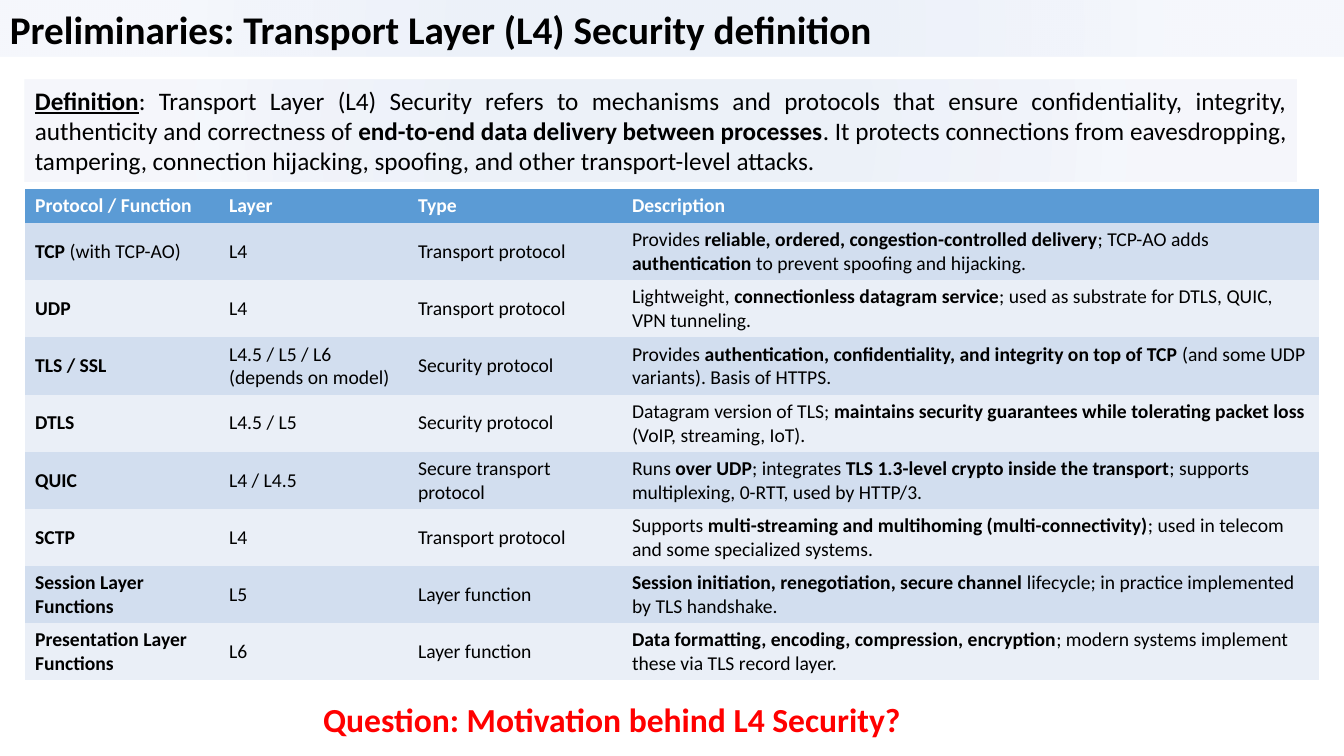
from dataclasses import dataclass

from lxml.etree import fromstring
from pptx import Presentation
from pptx.dml.color import RGBColor
from pptx.enum.shapes import MSO_SHAPE
from pptx.enum.text import MSO_ANCHOR, MSO_AUTO_SIZE, PP_ALIGN
from pptx.oxml.ns import qn
from pptx.util import Emu, Pt

FONT = "Calibri"
BLACK = RGBColor(0x00, 0x00, 0x00)
WHITE = RGBColor(0xFF, 0xFF, 0xFF)
RED = RGBColor(0xFF, 0x00, 0x00)
HEADER_BLUE = RGBColor(0x5B, 0x9B, 0xD5)
BANDS = (RGBColor(0xD2, 0xDE, 0xEF), RGBColor(0xEA, 0xEF, 0xF7))
TINT = RGBColor(0x44, 0x72, 0xC4)
TINT_STOPS = ((26, 10), (76, 5))  # position %, opacity %
PLAIN_TABLE_STYLE = "{2D5ABB26-0587-4C30-8999-92F81FD0307C}"


def px(n: int) -> Emu:
    return Emu(round(n * 914400 / 100.8))


@dataclass
class Box:
    left: int
    top: int
    width: int
    height: int
    text: str  # **bold** segments
    size: int
    color: RGBColor = BLACK
    align: PP_ALIGN = PP_ALIGN.LEFT
    tinted: bool = False

    def frame(self) -> tuple[Emu, ...]:
        return tuple(map(px, (self.left, self.top, self.width, self.height)))


@dataclass
class Protocol:
    name: str
    layer: str
    kind: str
    description: str

    def cells(self) -> tuple[str, ...]:
        return self.name, self.layer, self.kind, self.description


TITLE = Box(0, 0, 1344, 57, "**Preliminaries: Transport Layer (L4) Security definition**",
            28, tinted=True)
DEFINITION = Box(
    25, 80, 1272, 102,
    "**Definition**: Transport Layer (L4) Security refers to mechanisms and protocols "
    "that ensure confidentiality, integrity, authenticity and correctness of "
    "**end-to-end data delivery between processes**. It protects connections from "
    "eavesdropping, tampering, connection hijacking, spoofing, and other "
    "transport-level attacks.",
    18, align=PP_ALIGN.JUSTIFY, tinted=True)
QUESTION = Box(201, 694, 822, 50, "**Question: Motivation behind L4 Security?**",
               24, RED, PP_ALIGN.CENTER)

TABLE_LEFT, TABLE_TOP = 25, 189
COLUMN_WIDTHS = (194, 189, 214, 697)
HEADER_HEIGHT, ROW_HEIGHT = 34, 57
HEADER = Protocol("**Protocol / Function**", "**Layer**", "**Type**", "**Description**")
PROTOCOLS = (
    Protocol("**TCP** (with TCP-AO)", "L4", "Transport protocol",
             "Provides **reliable, ordered, congestion-controlled delivery**; TCP-AO adds "
             "**authentication** to prevent spoofing and hijacking."),
    Protocol("**UDP**", "L4", "Transport protocol",
             "Lightweight, **connectionless datagram service**; used as substrate for "
             "DTLS, QUIC, VPN tunneling."),
    Protocol("**TLS / SSL**", "L4.5 / L5 / L6 (depends on model)", "Security protocol",
             "Provides **authentication, confidentiality, and integrity on top of TCP "
             "**(and some UDP variants). Basis of HTTPS."),
    Protocol("**DTLS**", "L4.5 / L5", "Security protocol",
             "Datagram version of TLS; **maintains security guarantees while tolerating "
             "packet loss **(VoIP, streaming, IoT)."),
    Protocol("**QUIC**", "L4 / L4.5", "Secure transport protocol",
             "Runs **over UDP**; integrates **TLS 1.3-level crypto inside the transport**; "
             "supports multiplexing, 0-RTT, used by HTTP/3."),
    Protocol("**SCTP**", "L4", "Transport protocol",
             "Supports **multi-streaming and multihoming (multi-connectivity)**; used in "
             "telecom and some specialized systems."),
    Protocol("**Session Layer Functions**", "L5", "Layer function",
             "**Session initiation, renegotiation, secure channel **lifecycle; in practice "
             "implemented by TLS handshake."),
    Protocol("**Presentation Layer Functions**", "L6", "Layer function",
             "**Data formatting, encoding, compression, encryption**; modern systems "
             "implement these via TLS record layer."),
)


def write(p, text: str, size: int, color: RGBColor) -> None:
    """Fill a paragraph, switching bold at each ** mark."""
    for i, segment in enumerate(text.split("**")):
        if segment:
            r = p.add_run()
            r.text = segment
            r.font.name, r.font.size, r.font.bold = FONT, Pt(size), i % 2 == 1
            r.font.color.rgb = color


def tint(sp) -> None:
    """Give a shape the translucent radial gradient."""
    stops = "".join(
        f'<a:gs pos="{pos * 1000}"><a:srgbClr val="{TINT}">'
        f'<a:alpha val="{alpha * 1000}"/></a:srgbClr></a:gs>'
        for pos, alpha in TINT_STOPS)
    gradient = fromstring(
        '<a:gradFill xmlns:a="http://schemas.openxmlformats.org/drawingml/2006/main" '
        f'rotWithShape="1"><a:gsLst>{stops}</a:gsLst><a:path path="circle">'
        '<a:fillToRect l="0" t="0" r="0" b="0"/></a:path></a:gradFill>')
    sp.fill.solid()
    spPr = sp._element.spPr
    spPr.replace(spPr.find(qn("a:solidFill")), gradient)


def add_box(slide, box: Box):
    if box.tinted:
        sp = slide.shapes.add_shape(MSO_SHAPE.RECTANGLE, *box.frame())
        sp.shadow.inherit = False
        sp.line.fill.background()
        tint(sp)
    else:
        sp = slide.shapes.add_textbox(*box.frame())
    tf = sp.text_frame
    tf.word_wrap = True
    tf.auto_size = MSO_AUTO_SIZE.SHAPE_TO_FIT_TEXT
    tf.vertical_anchor = MSO_ANCHOR.TOP
    p = tf.paragraphs[0]
    p.alignment = box.align
    write(p, box.text, box.size, box.color)
    return sp


def add_protocol_table(slide) -> None:
    rows = (HEADER, *PROTOCOLS)
    heights = (HEADER_HEIGHT, *[ROW_HEIGHT] * len(PROTOCOLS))
    frame = slide.shapes.add_table(
        len(rows), len(COLUMN_WIDTHS), px(TABLE_LEFT), px(TABLE_TOP),
        px(sum(COLUMN_WIDTHS)), px(sum(heights)))
    table = frame.table
    table._tbl.tblPr.find(qn("a:tableStyleId")).text = PLAIN_TABLE_STYLE
    for column, width in zip(table.columns, COLUMN_WIDTHS):
        column.width = px(width)
    for i, (row, height, protocol) in enumerate(zip(table.rows, heights, rows)):
        row.height = px(height)
        for cell, text in zip(row.cells, protocol.cells()):
            cell.fill.solid()
            cell.fill.fore_color.rgb = BANDS[(i - 1) % 2] if i else HEADER_BLUE
            cell.vertical_anchor = MSO_ANCHOR.MIDDLE
            write(cell.text_frame.paragraphs[0], text, 14, BLACK if i else WHITE)


def main() -> None:
    prs = Presentation()
    prs.slide_width, prs.slide_height = px(1344), px(756)
    slide = prs.slides.add_slide(prs.slide_layouts[6])

    # Title band, protocol table, definition and closing question
    add_box(slide, TITLE)
    add_protocol_table(slide)
    definition = add_box(slide, DEFINITION)
    definition.text_frame.paragraphs[0].runs[0].font.underline = True
    add_box(slide, QUESTION)

    prs.save("out.pptx")


if __name__ == "__main__":
    main()
